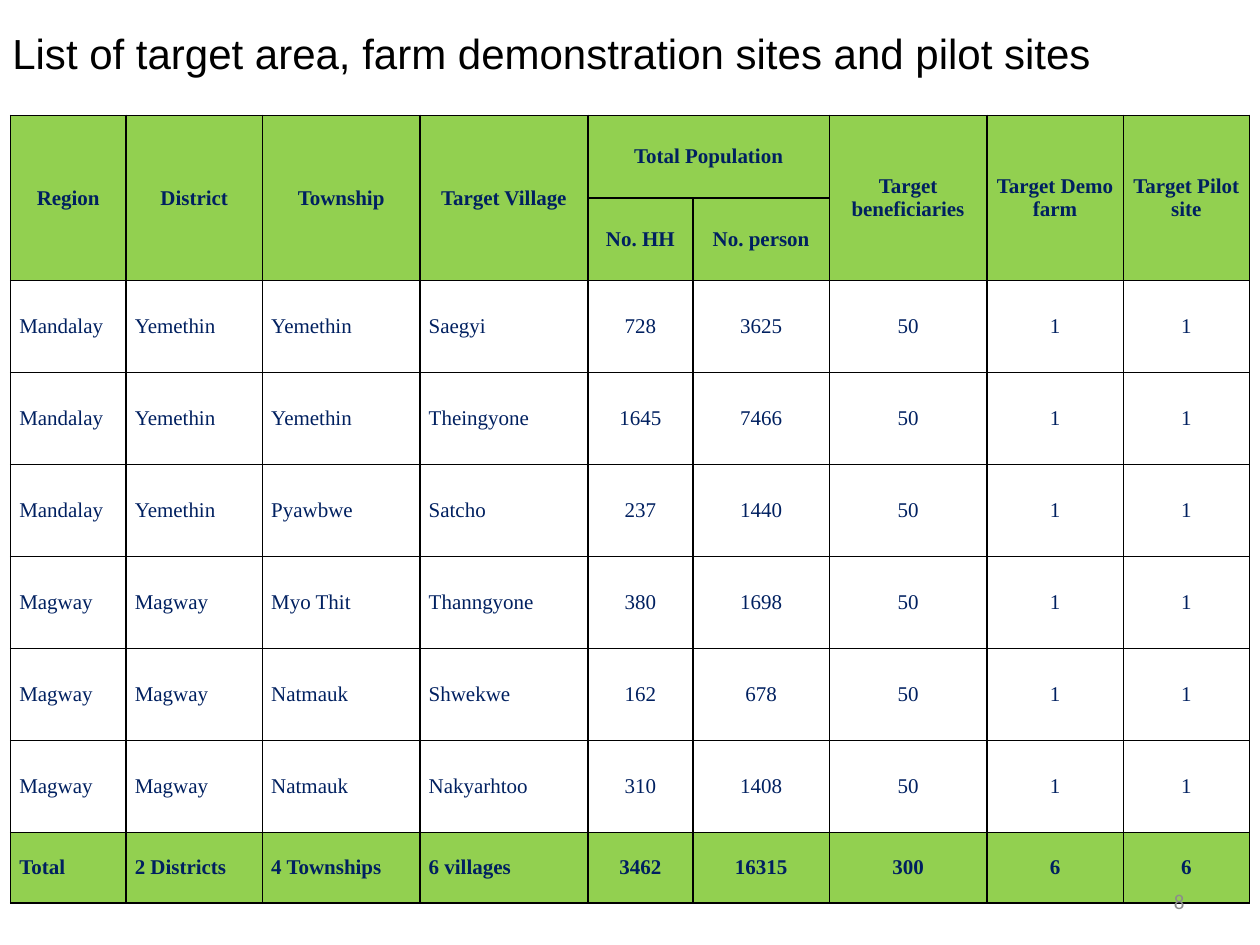
from dataclasses import dataclass

from lxml.etree import SubElement
from pptx import Presentation
from pptx.dml.color import RGBColor
from pptx.enum.text import MSO_ANCHOR, PP_ALIGN
from pptx.oxml.ns import qn
from pptx.util import Inches, Pt


@dataclass(frozen=True)
class Theme:
    green: str = "92D050"
    navy: str = "002060"
    black: str = "000000"
    gray: str = "8C8C8C"
    title: int = 24
    body: int = 12
    serif: str = "Times New Roman"
    sans: str = "Arial"
    number: str = "Calibri"


class Page:
    unit = Inches(1) / 12

    def __init__(self, slide, theme):
        self.slide = slide
        self.theme = theme

    def span(self, *counts):
        return [round(count * self.unit) for count in counts]

    def label(self, frame, words, size, face, color, align, bold=False):
        frame.word_wrap = True
        line = frame.paragraphs[0]
        line.text = words
        line.alignment = align
        font = line.font
        font.size, font.name, font.bold = Pt(size), face, bold
        font.color.rgb = RGBColor.from_string(color)

    def text(self, box, words, size, face, color, align=PP_ALIGN.LEFT):
        frame = self.slide.shapes.add_textbox(*self.span(*box)).text_frame
        frame.vertical_anchor = MSO_ANCHOR.MIDDLE
        self.label(frame, words, size, face, color, align)

    def border(self, cell):
        props = cell._tc.get_or_add_tcPr()
        for side in ("lnL", "lnR", "lnT", "lnB"):
            edge = SubElement(props, qn(f"a:{side}"), w=str(Pt(1)))
            fill = SubElement(edge, qn("a:solidFill"))
            SubElement(fill, qn("a:srgbClr"), val=self.theme.black)

    def cell(self, cell, words, align, strong):
        look = self.theme
        cell.margin_left = cell.margin_right = Inches(0.07)
        cell.margin_top = cell.margin_bottom = 0
        cell.vertical_anchor = MSO_ANCHOR.MIDDLE
        self.border(cell)
        if strong:
            cell.fill.solid()
            cell.fill.fore_color.rgb = RGBColor.from_string(look.green)
        else:
            cell.fill.background()
        self.label(cell.text_frame, words, look.body, look.serif, look.navy,
                   align, strong)

    def table(self, left, top, wide, high, rows, heads, names):
        box = self.span(left, top, sum(wide), sum(high))
        grid = self.slide.shapes.add_table(len(high), len(wide), *box).table
        grid.first_row = grid.horz_banding = False
        for col, width in zip(grid.columns, self.span(*wide)):
            col.width = width
        for row, height in zip(grid.rows, self.span(*high)):
            row.height = height
        last = len(rows) - 1
        for r, row in enumerate(rows):
            for c, words in enumerate(row):
                plain = heads <= r and c < names
                align = PP_ALIGN.LEFT if plain else PP_ALIGN.CENTER
                self.cell(grid.cell(r, c), words, align, r < heads or r == last)
        return grid


HEADS = [
    ["Region", "District", "Township", "Target Village", "Total Population", "",
     "Target beneficiaries", "Target Demo farm", "Target Pilot site"],
    ["", "", "", "", "No. HH", "No. person", "", "", ""],
]
SITES = [
    ["Mandalay", "Yemethin", "Yemethin", "Saegyi", "728", "3625"],
    ["Mandalay", "Yemethin", "Yemethin", "Theingyone", "1645", "7466"],
    ["Mandalay", "Yemethin", "Pyawbwe", "Satcho", "237", "1440"],
    ["Magway", "Magway", "Myo Thit", "Thanngyone", "380", "1698"],
    ["Magway", "Magway", "Natmauk", "Shwekwe", "162", "678"],
    ["Magway", "Magway", "Natmauk", "Nakyarhtoo", "310", "1408"],
]
SHARE = ["50", "1", "1"]
TOTAL = ["Total", "2 Districts", "4 Townships", "6 villages", "3462", "16315",
         "300", "6", "6"]
WIDE = [11, 13, 15, 16, 10, 13, 15, 13, 12]
HIGH = [7.86] * 2 + [8.76] * len(SITES) + [6.72]


def main():
    deck = Presentation()
    deck.slide_width, deck.slide_height = Inches(10), Inches(7.5)
    look = Theme()
    page = Page(deck.slides.add_slide(deck.slide_layouts[6]), look)
    rows = HEADS + [site + SHARE for site in SITES] + [TOTAL]
    grid = page.table(1, 11, WIDE, HIGH, rows, len(HEADS), 4)
    for c in (0, 1, 2, 3, 6, 7, 8):
        grid.cell(0, c).merge(grid.cell(1, c))
    grid.cell(0, 4).merge(grid.cell(0, 5))
    page.text((0, 2, 120, 6),
              "List of target area, farm demonstration sites and pilot sites",
              look.title, look.sans, look.black)
    page.text((86, 83.4, 28, 4.8), "8", look.body, look.number, look.gray,
              PP_ALIGN.RIGHT)
    deck.save("out.pptx")


if __name__ == "__main__":
    main()
